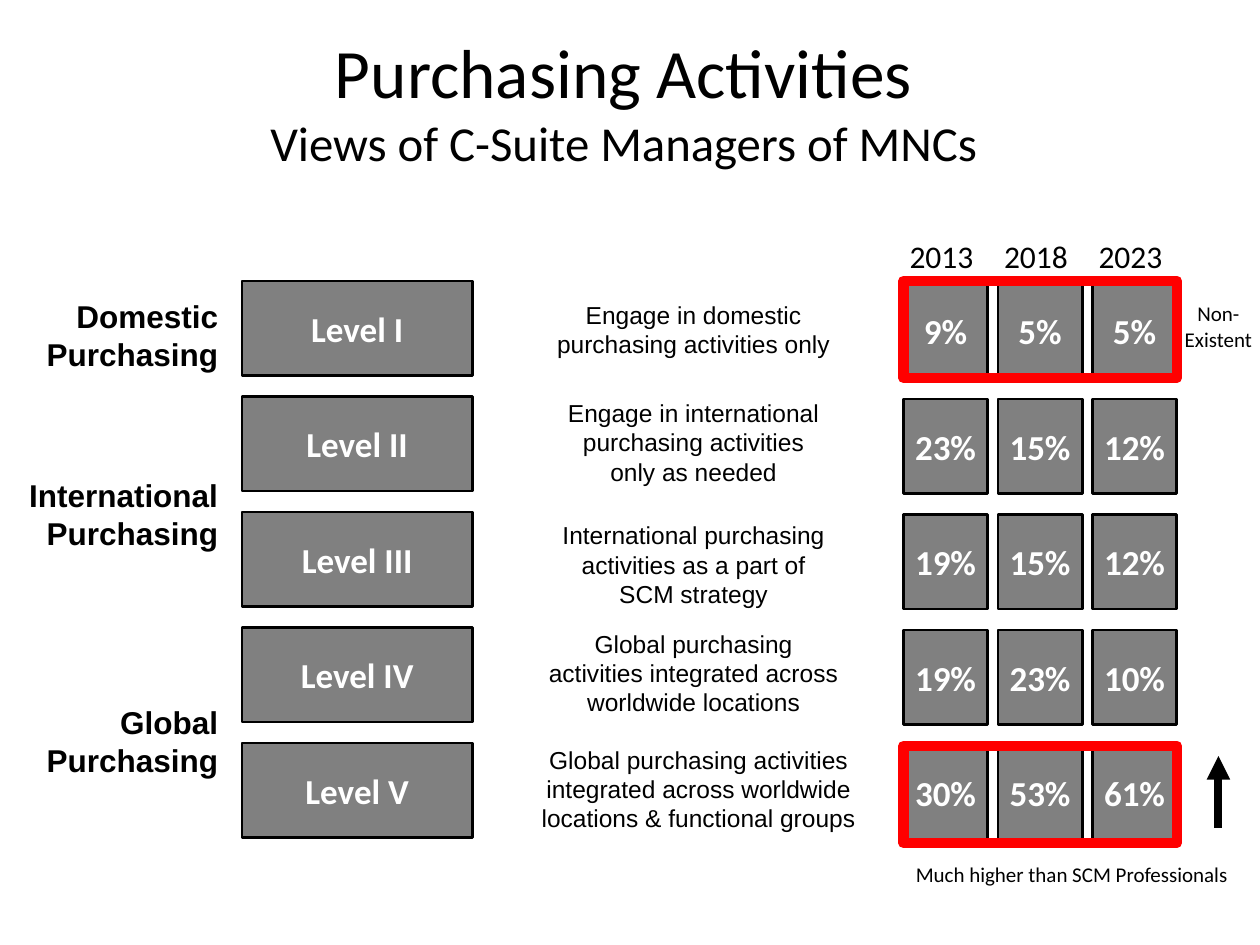
from dataclasses import dataclass

from lxml import etree
from pptx import Presentation
from pptx.dml.color import RGBColor
from pptx.enum.shapes import MSO_CONNECTOR, MSO_SHAPE
from pptx.enum.text import MSO_ANCHOR, PP_ALIGN
from pptx.oxml.ns import qn
from pptx.util import Inches, Pt

RECT = MSO_SHAPE.RECTANGLE
STRAIGHT = MSO_CONNECTOR.STRAIGHT
TOP, MIDDLE = MSO_ANCHOR.TOP, MSO_ANCHOR.MIDDLE
LEFT, CENTER, RIGHT = PP_ALIGN.LEFT, PP_ALIGN.CENTER, PP_ALIGN.RIGHT


@dataclass(frozen=True)
class Theme:
    black: RGBColor = RGBColor(0, 0, 0)
    white: RGBColor = RGBColor(255, 255, 255)
    grey: RGBColor = RGBColor(0x80, 0x80, 0x80)
    red: RGBColor = RGBColor(255, 0, 0)
    heading: str = "Calibri"
    body: str = "Arial"
    title: float = 39.6
    subtitle: float = 27.9
    box: float = 20
    label: float = 18
    description: float = 14
    note: float = 12


THEME = Theme()


@dataclass(frozen=True)
class Style:
    font: str
    size: float
    align: PP_ALIGN = CENTER
    bold: bool = False
    color: RGBColor = THEME.black


@dataclass(frozen=True)
class Area:
    left: float
    top: float
    width: float
    height: float

    def emu(self):
        return [Inches(v) for v in (self.left, self.top, self.width, self.height)]


@dataclass(frozen=True)
class Level:
    name: str
    description: str
    area: Area
    shares: tuple[str, ...]


TITLE = Style(THEME.heading, THEME.title)
SUBTITLE = Style(THEME.heading, THEME.subtitle)
BOX = Style(THEME.heading, THEME.box, bold=True, color=THEME.white)
GROUP = Style(THEME.body, THEME.label, RIGHT, bold=True)
DESCRIPTION = Style(THEME.body, THEME.description)
YEAR = Style(THEME.heading, THEME.label, LEFT)
NOTE = Style(THEME.heading, THEME.note)
NOTE_LEFT = Style(THEME.heading, THEME.note, LEFT)

LEVELS = [
    Level("Level I", "Engage in domestic purchasing activities only",
          Area(4.17, 2.33, 2.67, 0.57), ("9%", "5%", "5%")),
    Level("Level II", "Engage in international\npurchasing activities\nonly as needed",
          Area(4.17, 3.11, 2.67, 0.81), ("23%", "15%", "12%")),
    Level("Level III", "International purchasing\nactivities as a part of\nSCM strategy",
          Area(4.17, 4.08, 2.67, 0.81), ("19%", "15%", "12%")),
    Level("Level IV", "Global purchasing\nactivities integrated across\nworldwide locations",
          Area(4.17, 4.94, 2.67, 0.81), ("19%", "23%", "10%")),
    Level("Level V", "Global purchasing activities integrated across worldwide "
          "locations & functional groups",
          Area(4.17, 5.86, 2.75, 0.81), ("30%", "53%", "61%")),
]
GROUPS = [
    ("Domestic Purchasing", Area(0, 2.31, 1.83, 0.71)),
    ("International Purchasing", Area(0, 3.73, 1.83, 0.7)),
    ("Global Purchasing", Area(0.25, 5.53, 1.58, 0.71)),
]
YEARS = ("2013", "2018", "2023")
ROW_PITCH = 5.5 / 6
COLUMN_PITCH = 0.75
BOX_HEIGHT = 0.75
SHARES_LEFT = 7.17


def add_runs(p, text: str, style: Style) -> None:
    """Add one run per line, with line breaks between them."""
    p.alignment = style.align
    for i, line in enumerate(text.split("\n")):
        if i:
            p.add_line_break()
        r = p.add_run()
        r.text = line
        r.font.name = style.font
        r.font.size = Pt(style.size)
        r.font.bold = style.bold
        r.font.color.rgb = style.color


def add_text(s, area: Area, text: str, style: Style, wrap: bool = True, anchor=TOP):
    tf = s.shapes.add_textbox(*area.emu()).text_frame
    tf.word_wrap = wrap
    tf.vertical_anchor = anchor
    add_runs(tf.paragraphs[0], text, style)
    return tf


def add_box(s, area: Area, text: str) -> None:
    sp = s.shapes.add_shape(RECT, *area.emu())
    sp.shadow.inherit = False
    sp.fill.solid()
    sp.fill.fore_color.rgb = THEME.grey
    sp.line.color.rgb = THEME.black
    sp.line.width = Pt(1.5)
    tf = sp.text_frame
    tf.word_wrap = False
    tf.vertical_anchor = MIDDLE
    add_runs(tf.paragraphs[0], text, BOX)


def add_highlight(s, top: float) -> None:
    sp = s.shapes.add_shape(RECT, *Area(SHARES_LEFT, top, 2.17, 0.77).emu())
    sp.shadow.inherit = False
    sp.fill.background()
    sp.line.color.rgb = THEME.red
    sp.line.width = Pt(6)
    etree.SubElement(sp.line._get_or_add_ln(), qn("a:round"))


def add_up_arrow(s, x: float, top: float, bottom: float) -> None:
    line = s.shapes.add_connector(STRAIGHT, Inches(x), Inches(top), Inches(x), Inches(bottom))
    line.line.color.rgb = THEME.black
    line.line.width = Pt(4.5)
    etree.SubElement(line.line._get_or_add_ln(), qn("a:headEnd"), type="triangle")
    etree.SubElement(line._element.spPr, qn("a:effectLst"))


def main() -> None:
    prs = Presentation()
    prs.slide_width, prs.slide_height = Inches(10), Inches(7.5)
    s = prs.slides.add_slide(prs.slide_layouts[6])

    tf = add_text(s, Area(0.45, 0.17, 9, 1.25), "Purchasing Activities", TITLE, anchor=MIDDLE)
    add_runs(tf.add_paragraph(), "Views of C-Suite Managers of MNCs", SUBTITLE)

    for name, area in GROUPS:
        add_text(s, area, name, GROUP)

    for row, level in enumerate(LEVELS):
        top = 2.23 + row * ROW_PITCH
        add_text(s, level.area, level.description, DESCRIPTION)
        add_box(s, Area(1.92, top, 1.83, BOX_HEIGHT), level.name)
        for column, share in enumerate(level.shares):
            left = SHARES_LEFT + column * COLUMN_PITCH
            add_box(s, Area(left, top + 0.02, 0.67, BOX_HEIGHT), share)

    for column, year in enumerate(YEARS):
        add_text(s, Area(7.12 + column * COLUMN_PITCH, 1.83, 0.71, 0.4), year, YEAR, wrap=False)

    for top in (2.23, 5.92):
        add_highlight(s, top)
    add_up_arrow(s, 9.67, 6, 6.57)

    tf = add_text(s, Area(9.3, 2.34, 0.74, 0.5), "Non-", NOTE, wrap=False)
    add_runs(tf.add_paragraph(), "Existent", NOTE)
    add_text(s, Area(7.17, 6.79, 2.7, 0.3), "Much higher than SCM Professionals", NOTE_LEFT, wrap=False)

    prs.save("out.pptx")


if __name__ == "__main__":
    main()
